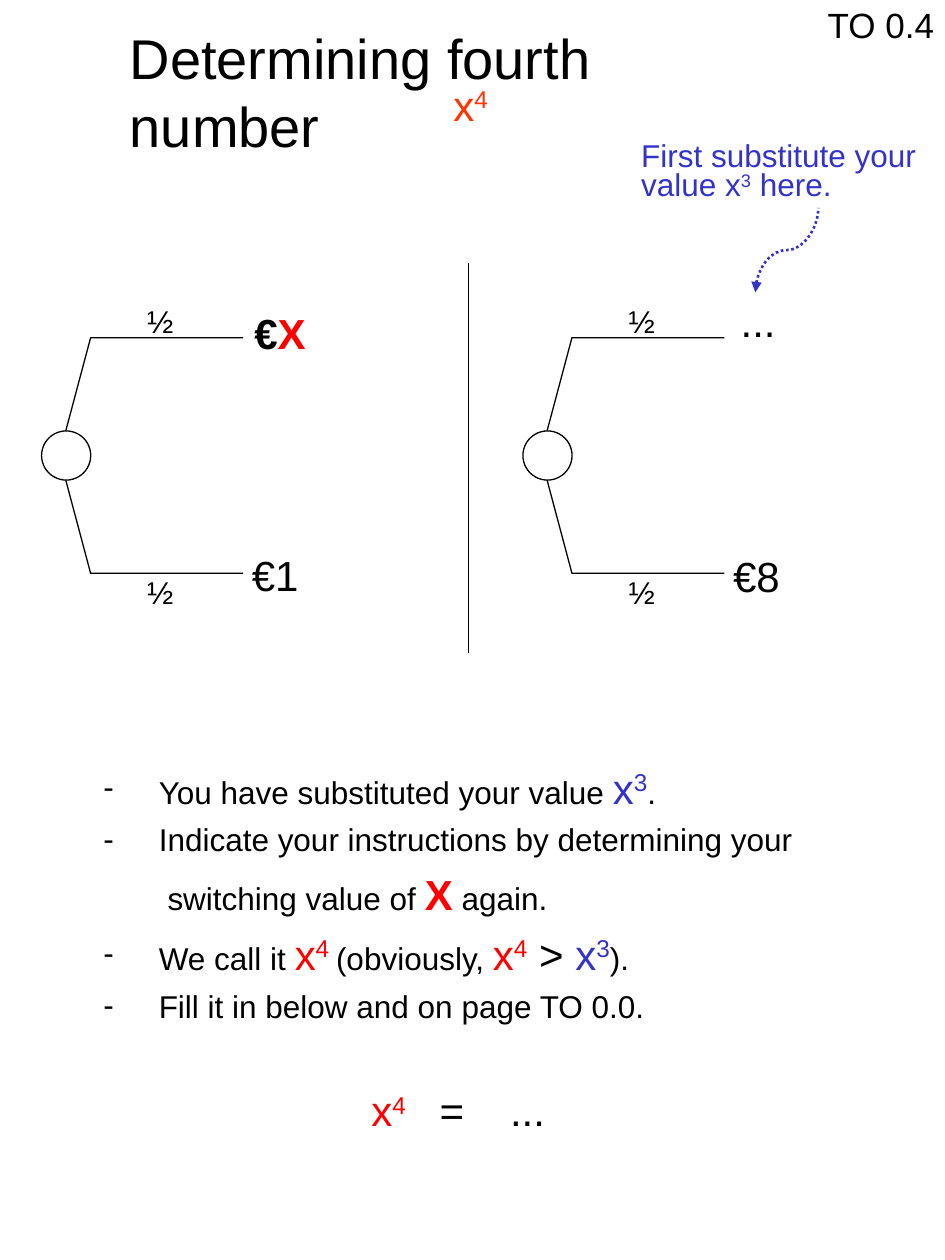
from pptx import Presentation
from pptx import util as u
from pptx.dml.color import RGBColor
from pptx.enum import shapes as sh, text as tx
from pptx.oxml.ns import qn
from lxml import etree

HUES = {"ink": "000000", "paper": "FFFFFF", "red": "FF0000",
        "flame": "FF3300", "blue": "3333CC"}
COLS, ROWS = 75, 100          # grid of the page
WIDE, HIGH = u.Inches(7.5), u.Inches(10)


def grid(*box):
    """Turn columns and rows, in turn, into lengths."""
    units = (WIDE / COLS, HIGH / ROWS)
    return [round(n * units[i % 2]) for i, n in enumerate(box)]


def hue(name):
    return RGBColor.from_string(HUES[name])


def add_xml(node, tag, **attrs):
    return etree.SubElement(node, qn(tag), **attrs)


def write(frame, paras, size=18, color="ink", lead=None, wrap=False):
    """Each paragraph is a list of strings or (string, format) pairs."""
    frame.word_wrap = wrap
    frame.vertical_anchor = tx.MSO_ANCHOR.TOP
    for i, parts in enumerate(paras):
        para = frame.add_paragraph() if i else frame.paragraphs[0]
        para.alignment = tx.PP_ALIGN.LEFT
        para.space_before = u.Pt(0)
        if lead:
            para.line_spacing = lead[i] if isinstance(lead, tuple) else lead
        for part in parts:
            if part == "\n":
                para.add_line_break()
                continue
            words, form = (part, {}) if isinstance(part, str) else part
            run = para.add_run()
            run.text = words
            run.font.name = "Arial"
            run.font.size = u.Pt(form.get("size", size))
            run.font.bold = form.get("bold", False)
            run.font.color.rgb = hue(form.get("color", color))
            if form.get("sup"):
                run._r.get_or_add_rPr().set("baseline", "30000")


def label(page, box, *paras, **form):
    item = page.shapes.add_textbox(*grid(*box))
    write(item.text_frame, paras, **form)
    item.text_frame.auto_size = tx.MSO_AUTO_SIZE.SHAPE_TO_FIT_TEXT
    return item


def power(base, exp, color):
    """A large letter with a raised index."""
    form = {"size": 24, "color": color}
    return [(base, form), (exp, {**form, "sup": True})]


def draw(item, color="ink", width=0.75):
    item.line.color.rgb = hue(color)
    item.line.width = u.Pt(width)


def join(page, kind, box, **form):
    item = page.shapes.add_connector(kind, *grid(*box))
    draw(item, **form)
    add_xml(item._element.spPr, "a:effectLst")
    return item


def head(page):
    """Title, its symbol and the page code."""
    title = page.shapes.title
    title.left, title.top, title.width, title.height = grid(9.3, 1.4, 54.8, 6.3)
    write(title.text_frame, [["Determining fourth number"]], size=32, wrap=True)
    title.text_frame.auto_size = tx.MSO_AUTO_SIZE.NONE
    title.text_frame.margin_right = u.Inches(0.5)
    label(page, (35, 5.8, 6, 5), power("x", "4", "flame"), wrap=True)
    label(page, (64.7, -0.2, 10.5, 4.3), ["TO 0.4"], size=20)


def tree(page, left, top, high, low):
    """Chance node with two branches, each with odds and a payoff."""
    mid = top + 12.65
    for side, odds, pay in ((-1, 0, high), (1, 21.5, low)):
        end = mid + side * 9.35
        pen = page.shapes.build_freeform(*grid(left + 1.4, mid), scale=1.0)
        ends = [tuple(grid(left + x, end)) for x in (3.9, 16)]
        pen.add_line_segments(ends, close=False)
        branch = pen.convert_to_shape()
        branch.fill.background()
        branch.shadow.inherit = False
        draw(branch)
        label(page, (left + 7.4, top + odds, 4.1, 4), ["½"])
        (x, y, wide), parts = pay
        label(page, (left + x, top + y, wide, 5), parts, size=24)
    node = page.shapes.add_shape(sh.MSO_SHAPE.OVAL,
                                 *grid(left, mid - 1.95, 3.9, 3.9))
    node.shadow.inherit = False
    node.fill.solid()
    node.fill.fore_color.rgb = hue("paper")
    draw(node)


def hint(page, left, top):
    """Blue remark with a dotted arrow to the open payoff."""
    label(page, (left, top, 23.8, 5.5), ["First substitute your"],
          ["value x", ("3", {"sup": True}), " here."],
          color="blue", lead=(0.7, 0.8))
    x, y = left + 9.2, top + 6.25
    arrow = join(page, sh.MSO_CONNECTOR.CURVE, (x, y, x + 6.7, y + 5),
                 color="blue", width=1.5)
    arrow.line.dash_style = 3     # round dots (sysDot)
    arrow._element.spPr.find(qn("a:xfrm")).set("rot", "16200000")
    add_xml(arrow.line._get_or_add_ln(), "a:headEnd", type="triangle")


def steps(page, box):
    """Dashed list of instructions."""
    body = page.placeholders[1]
    body.left, body.top, body.width, body.height = grid(*box)
    x3, x4 = power("x", "3", "blue"), power("x", "4", "red")
    big = {"size": 24}
    write(body.text_frame, [
        ["You have substituted your value ", *x3, "."],
        ["Indicate your instructions by determining your", "\n",
         " switching value of ", ("X", {**big, "color": "red", "bold": True}),
         " again."],
        ["We call it ", *x4, (" ", {**big, "sup": True}), "(obviously, ",
         *x4, (" > ", big), *x3, ")."],
        ["Fill it in below and on page TO 0.0."],
    ], lead=1.2, wrap=True)
    body.text_frame.auto_size = tx.MSO_AUTO_SIZE.NONE
    inset = u.Inches(0.44)
    for para in body.text_frame.paragraphs:
        props = para._p.get_or_add_pPr()
        props.set("marL", str(inset))
        props.set("indent", str(-inset))
        add_xml(props, "a:buFont", typeface="Arial")
        add_xml(props, "a:buChar", char="-")


def answer(page, box):
    """Line to fill in, set on tab stops."""
    line = label(page, box, [*power("x", "4", "red"), "\t=\t..."],
                 size=24, wrap=True)
    props = line.text_frame.paragraphs[0]._p.get_or_add_pPr()
    tabs = add_xml(props, "a:tabLst")
    for stop in (0.54, 1.1):
        add_xml(tabs, "a:tab", pos=str(u.Inches(stop)), algn="l")


def main():
    deck = Presentation()
    deck.slide_width, deck.slide_height = WIDE, HIGH
    page = deck.slides.add_slide(deck.slide_layouts[1])
    head(page)
    prize = [("€", {"bold": True}), ("X", {"bold": True, "color": "red"})]
    tree(page, 3.3, 23.5, ((15.9, 0.4, 6.1), prize),
         ((15.7, 19.6, 5.7), ["€1"]))
    tree(page, 41.5, 23.5, ((16.3, -0.5, 4.8), ["..."]),
         ((15.7, 19.7, 5.7), ["€8"]))
    join(page, sh.MSO_CONNECTOR.STRAIGHT, (37.2, 20.9, 37.2, 51.8))
    hint(page, 49.9, 11.1)
    steps(page, (7.2, 59.2, 58.8, 22.6))
    answer(page, (28.5, 85.6, 18, 5))
    deck.save("out.pptx")


if __name__ == "__main__":
    main()
